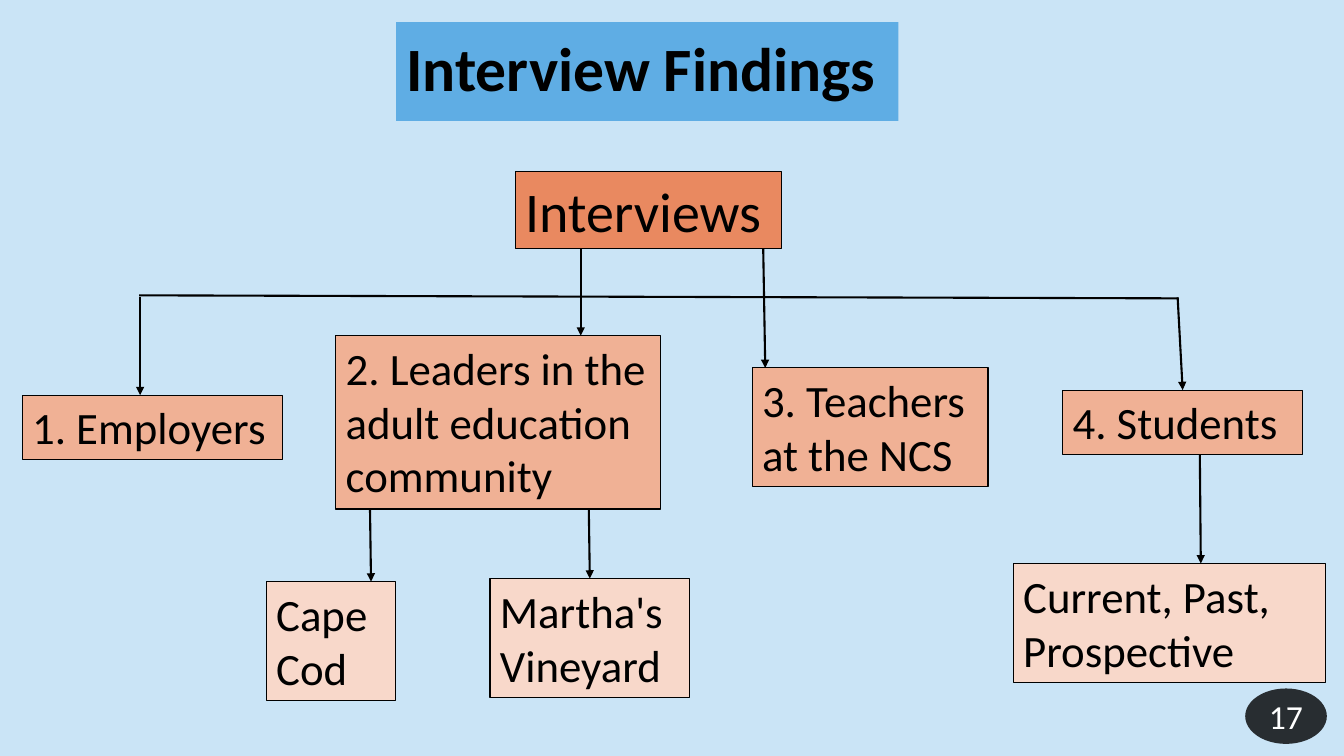
from pptx import Presentation
from pptx.dml.color import RGBColor
from pptx.enum.shapes import MSO_CONNECTOR, MSO_SHAPE
from pptx.enum.text import MSO_ANCHOR, MSO_AUTO_SIZE, PP_ALIGN
from pptx.oxml.ns import qn
from pptx.util import Inches, Pt
from lxml import etree

RECTANGLE, OVAL = MSO_SHAPE.RECTANGLE, MSO_SHAPE.OVAL
STRAIGHT = MSO_CONNECTOR.STRAIGHT
TOP, MIDDLE = MSO_ANCHOR.TOP, MSO_ANCHOR.MIDDLE
LEFT, CENTER = PP_ALIGN.LEFT, PP_ALIGN.CENTER
FIT_TEXT = MSO_AUTO_SIZE.SHAPE_TO_FIT_TEXT
TOP_SITE = 0

SKY = RGBColor(0xCA, 0xE4, 0xF6)
BLUE = RGBColor(0x5F, 0xAD, 0xE4)
ORANGE = RGBColor(0xE9, 0x89, 0x60)
PEACH = RGBColor(0xF0, 0xB1, 0x95)
PALE = RGBColor(0xF8, 0xD8, 0xCA)
BLACK = RGBColor(0, 0, 0)
WHITE = RGBColor(0xFF, 0xFF, 0xFF)
FONT = "Calibri"

# Content: places are columns and rows of a 13.33 by 7.5 grid
COLUMNS, ROWS = 13.33, 7.5
CELL = Inches(1)
TITLE = ("Interview Findings", (3.93, 0.22, 4.98, 0.98))
PAGE_NUMBER = ("17", (12.35, 6.83, 0.81, 0.55))
BOXES = {  # name: text, place, fill, text size
    "root": ("Interviews", (5.11, 1.7, 2.64, 0.77), ORANGE, 40),
    "employers": ("1. Employers", (0.22, 3.92, 2.58, 0.64), PEACH, 32),
    "leaders": ("2. Leaders in the adult education community",
                (3.33, 3.33, 3.22, 1.72), PEACH, 32),
    "teachers": ("3. Teachers at the NCS", (7.46, 3.65, 2.34, 1.18), PEACH, 32),
    "students": ("4. Students", (10.54, 3.87, 2.38, 0.64), PEACH, 32),
    "cape": ("Cape Cod", (2.64, 5.77, 1.28, 1.18), PALE, 32),
    "island": ("Martha's Vineyard", (4.86, 5.74, 1.98, 1.18), PALE, 32),
    "groups": ("Current, Past, Prospective", (10.05, 5.59, 3.1, 1.18), PALE, 32),
}
BRANCH = (1.38, 2.93, 11.69, 2.96)
BRANCH_ROW = 2.95
ARROWS = [  # parent, child, start column, end column (None: middle of child)
    ("branch", "employers", 1.39, 1.39),
    ("root", "leaders", 5.76, 5.76),
    ("root", "teachers", 7.57, 7.59),
    ("branch", "students", 11.68, None),
    ("leaders", "cape", 3.67, 3.68),
    ("leaders", "island", 5.84, None),
    ("students", "groups", 11.9, 11.91),
]


def grid(*cells):
    return [round(cell * CELL) for cell in cells]


def add_box(page, kind, text, place, fill, size, color=BLACK, bold=False,
            anchor=TOP, align=LEFT):
    box = page.shapes.add_shape(kind, *grid(*place))
    box.shadow.inherit = False
    box.fill.solid()
    box.fill.fore_color.rgb = fill
    box.line.fill.background()
    frame = box.text_frame
    frame.word_wrap = True
    frame.vertical_anchor = anchor
    para = frame.paragraphs[0]
    para.alignment = align
    span = para.add_run()
    span.text = text
    span.font.name, span.font.size, span.font.bold = FONT, Pt(size), bold
    span.font.color.rgb = color
    return box


def add_line(page, start, end, arrow=False):
    line = page.shapes.add_connector(STRAIGHT, *grid(*start, *end))
    line.line.color.rgb = BLACK
    line.line.width = Pt(1.5)
    properties = line.line._get_or_add_ln()
    if arrow:
        etree.SubElement(properties, qn("a:tailEnd"), type="triangle")
    etree.SubElement(properties.getparent(), qn("a:effectLst"))
    return line


def main():
    deck = Presentation()
    deck.slide_width, deck.slide_height = grid(COLUMNS, ROWS)
    page = deck.slides.add_slide(deck.slide_layouts[6])
    page.background.fill.solid()
    page.background.fill.fore_color.rgb = SKY

    # Title
    title = add_box(page, RECTANGLE, *TITLE, BLUE, 44, bold=True, anchor=MIDDLE)
    title.text_frame.paragraphs[0].line_spacing = 0.9

    # Boxes of the tree
    drawn = {}
    for name, (text, place, fill, size) in BOXES.items():
        box = add_box(page, RECTANGLE, text, place, fill, size)
        box.text_frame.auto_size = FIT_TEXT
        box.line.color.rgb = BLACK
        box.line.width = Pt(0.75)
        drawn[name] = box

    # Branch line and arrows from each parent's bottom to its child's top
    add_line(page, BRANCH[:2], BRANCH[2:])
    bottoms = {name: box[1][1] + box[1][3] for name, box in BOXES.items()}
    bottoms["branch"] = BRANCH_ROW
    for parent, child, start, end in ARROWS:
        left, top, width, _ = BOXES[child][1]
        joined = end is None
        target = left + width / 2 if joined else end
        arrow = add_line(page, (start, bottoms[parent]), (target, top), arrow=True)
        if joined:
            arrow.end_connect(drawn[child], TOP_SITE)

    # Page number
    badge = add_box(page, OVAL, *PAGE_NUMBER, BLACK, 24, WHITE,
                    anchor=MIDDLE, align=CENTER)
    tint = badge.fill._xPr.find(qn("a:solidFill"))[0]
    etree.SubElement(tint, qn("a:alpha"), val="80000")
    frame = badge.text_frame
    frame.margin_left = frame.margin_right = 0
    frame.margin_top = frame.margin_bottom = 0
    frame.paragraphs[0].space_after = Pt(6)

    deck.save("out.pptx")


if __name__ == "__main__":
    main()
